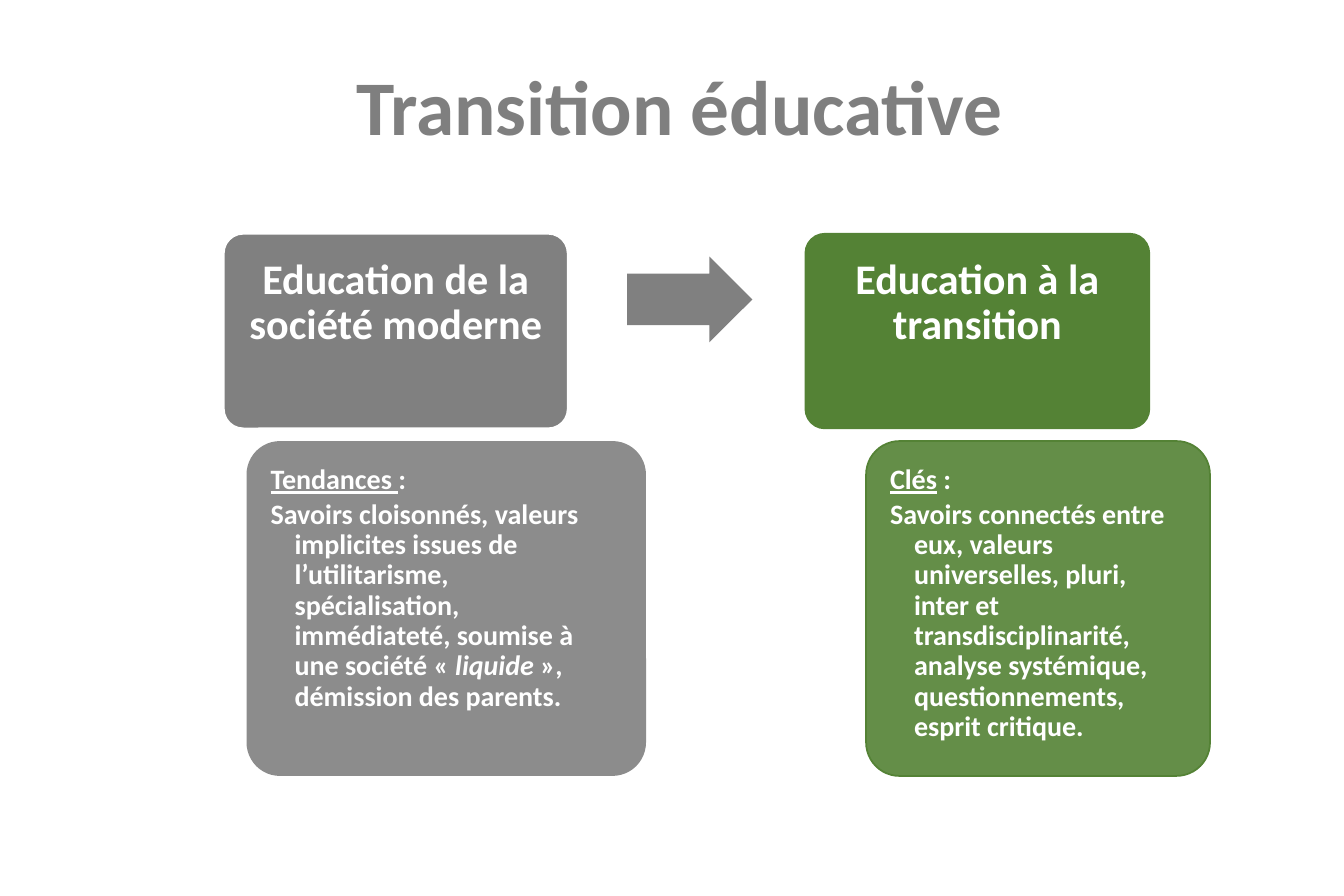
"""Build the slide comparing modern education with education for transition."""
from dataclasses import dataclass
from typing import Optional

from lxml.etree import SubElement
from pptx import Presentation
from pptx.dml.color import RGBColor
from pptx.enum.shapes import MSO_SHAPE as Preset
from pptx.enum.text import MSO_ANCHOR as Anchor, PP_ALIGN as Align
from pptx.oxml.ns import qn
from pptx.shapes.autoshape import Shape
from pptx.slide import Slide
from pptx.text.text import TextFrame
from pptx.util import Inches, Pt

WHITE = RGBColor(0xFF, 0xFF, 0xFF)
TITLE_GREY = RGBColor(0x7F, 0x7F, 0x7F)
GREY = RGBColor(0x80, 0x80, 0x80)
GREEN = RGBColor(0x54, 0x82, 0x35)
FONT = "Calibri"
HEADER_TOP, HEADER_WIDTH, HEADER_HEIGHT = 1.85, 2.72, 1.54
BODY_TOP, BODY_HEIGHT = 3.49, 2.65
BODY_MARGIN = 0.07


@dataclass(frozen=True)
class Box:
    left: float
    top: float
    width: float
    height: float


@dataclass(frozen=True)
class Span:
    text: str
    underline: bool = False
    italic: bool = False


@dataclass(frozen=True)
class Column:
    header_left: float
    body_left: float
    body_width: float
    text_width: float
    color: RGBColor
    header_line: RGBColor
    body_line: Optional[RGBColor]
    heading: str
    paragraphs: tuple[tuple[Span, ...], ...]


COLUMNS = (
    Column(
        1.77, 1.95, 3.16, 3.01, GREY, WHITE, None,
        "Education de la société moderne",
        (
            (Span("Tendances ", underline=True), Span(":")),
            (
                Span("Savoirs cloisonnés, valeurs implicites issues de "
                     "l’utilitarisme, spécialisation, immédiateté, "
                     "soumise à une société « "),
                Span("liquide ", italic=True),
                Span("», démission des parents."),
            ),
        ),
    ),
    Column(
        6.37, 6.85, 2.72, 2.57, GREEN, GREEN, GREEN,
        "Education à la transition",
        (
            (Span("Clés", underline=True), Span(" :")),
            (
                Span("Savoirs connectés entre eux, valeurs universelles, "
                     "pluri, inter et transdisciplinarité, analyse "
                     "systémique, questionnements, esprit critique."),
            ),
        ),
    ),
)


def add_preset(slide: Slide, preset: Preset, box: Box, fill: RGBColor,
               adjustments: tuple[float, ...] = (),
               line: Optional[RGBColor] = None,
               opacity: Optional[int] = None) -> Shape:
    """Add a flat preset shape, optionally outlined or translucent."""
    shape = slide.shapes.add_shape(
        preset, Inches(box.left), Inches(box.top), Inches(box.width), Inches(box.height))
    shape.shadow.inherit = False
    for index, value in enumerate(adjustments):
        shape.adjustments[index] = value
    shape.fill.solid()
    shape.fill.fore_color.rgb = fill
    if opacity is not None:
        color = shape.fill._xPr.find(f"{qn('a:solidFill')}/{qn('a:srgbClr')}")
        SubElement(color, qn("a:alpha")).set("val", str(opacity * 1000))
    if line is None:
        shape.line.fill.background()
    else:
        shape.line.color.rgb = line
        shape.line.width = Pt(1)
    return shape


def add_text_frame(slide: Slide, box: Box,
                   insets: tuple[float, float, float, float]) -> TextFrame:
    """Add a wrapping, top-anchored text box with left, top, right, bottom insets."""
    shape = slide.shapes.add_textbox(
        Inches(box.left), Inches(box.top), Inches(box.width), Inches(box.height))
    frame = shape.text_frame
    frame.word_wrap = True
    frame.vertical_anchor = Anchor.TOP
    frame.margin_left, frame.margin_top, frame.margin_right, frame.margin_bottom = map(
        Inches, insets)
    return frame


def write_paragraph(frame: TextFrame, spans: tuple[Span, ...], size: int,
                    color: RGBColor = WHITE, align: Align = Align.CENTER,
                    spacing: float = 0.9, hanging: bool = False,
                    first: bool = True) -> None:
    """Write bold runs into the first or a new paragraph."""
    paragraph = frame.paragraphs[0] if first else frame.add_paragraph()
    paragraph.alignment = align
    paragraph.line_spacing = spacing
    if hanging:
        paragraph.level = 1
        paragraph.space_after = Pt(2.7)
        properties = paragraph._p.get_or_add_pPr()
        properties.set("marL", str(Inches(0.19)))
        properties.set("indent", str(-Inches(0.19)))
    for span in spans:
        run = paragraph.add_run()
        run.text = span.text
        run.font.name = FONT
        run.font.size = Pt(size)
        run.font.bold = True
        run.font.italic = span.italic
        run.font.underline = span.underline
        run.font.color.rgb = color


def add_column(slide: Slide, column: Column) -> None:
    """Draw a header card and its body card with their texts."""
    header = Box(column.header_left, HEADER_TOP, HEADER_WIDTH, HEADER_HEIGHT)
    add_preset(slide, Preset.ROUNDED_RECTANGLE, header, column.color, (0.1,),
               column.header_line)
    heading = add_text_frame(
        slide, Box(header.left, header.top, header.width, 1.03), (0.19, 0.19, 0.19, 0.1))
    write_paragraph(heading, (Span(column.heading),), 24)

    body = Box(column.body_left, BODY_TOP, column.body_width, BODY_HEIGHT)
    add_preset(slide, Preset.ROUNDED_RECTANGLE, body, column.color, (0.1,),
               column.body_line, opacity=90)
    text_box = Box(body.left + BODY_MARGIN, body.top + BODY_MARGIN, column.text_width, 2.49)
    frame = add_text_frame(slide, text_box, (0.12, 0.12, 0.2, 0.12))
    for index, spans in enumerate(column.paragraphs):
        write_paragraph(frame, spans, 16, align=Align.LEFT, hanging=True, first=index == 0)


def main() -> None:
    """Create and save the presentation."""
    presentation = Presentation()
    presentation.slide_width = Inches(10.63)
    presentation.slide_height = Inches(7.09)
    slide = presentation.slides.add_slide(presentation.slide_layouts[6])

    title = add_preset(slide, Preset.RECTANGLE, Box(0.12, 0.41, 10.51, 0.84), WHITE)
    title.text_frame.word_wrap = True
    title.text_frame.vertical_anchor = Anchor.TOP
    write_paragraph(title.text_frame, (Span("Transition éducative"),), 44,
                    TITLE_GREY, spacing=1.0)

    for column in COLUMNS:
        add_column(slide, column)
    add_preset(slide, Preset.RIGHT_ARROW, Box(4.96, 2.03, 0.99, 0.68), GREY, (0.6, 0.5))
    presentation.save("out.pptx")


if __name__ == "__main__":
    main()
